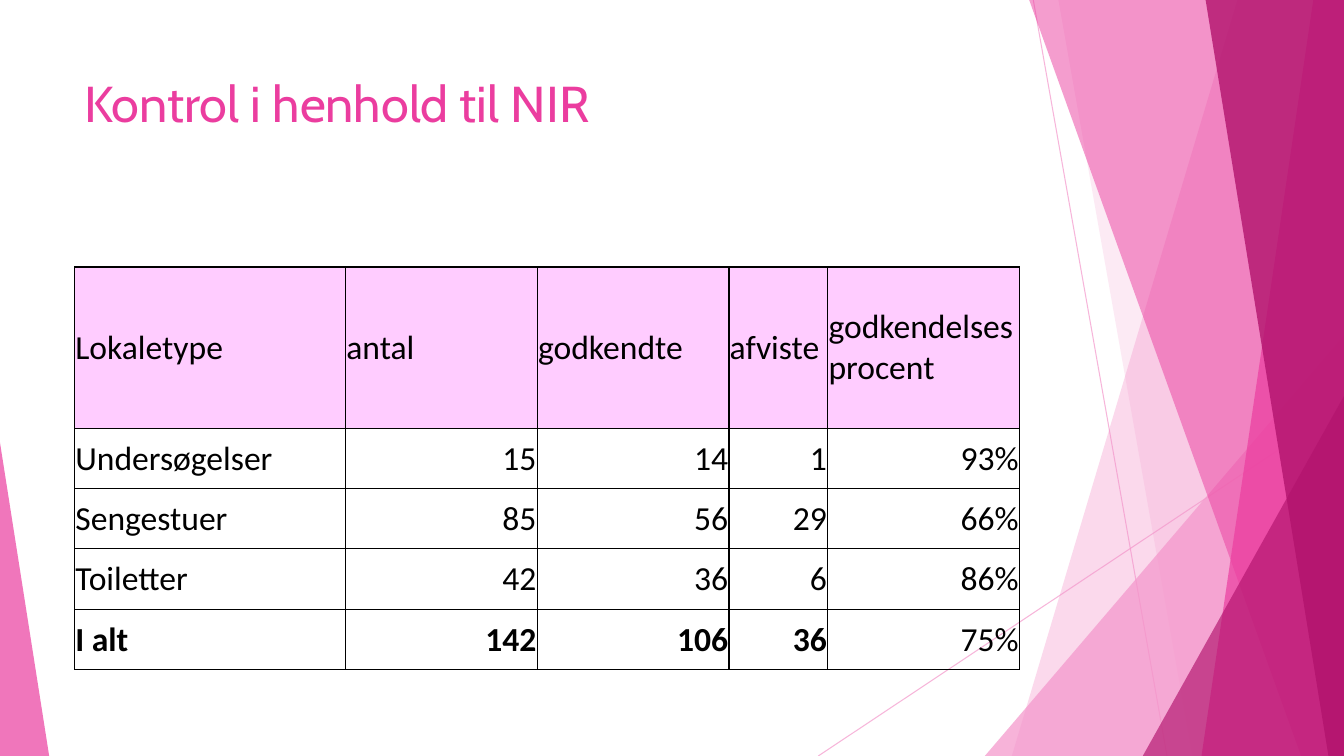
from lxml import etree
from pptx import Presentation
from pptx import util as u
from pptx.dml.color import RGBColor
from pptx.enum import shapes, text
from pptx.oxml import ns

PINK = RGBColor(0xEB, 0x3D, 0x9F)
LIGHT_PINK = RGBColor(0xF4, 0x96, 0xCB)
DARK_PINK = RGBColor(0xB2, 0x13, 0x6D)
HEADER_PINK = RGBColor(0xFF, 0xCC, 0xFF)
BLACK = RGBColor(0, 0, 0)

# Content
TITLE = "Kontrol i henhold til NIR"
ROWS = [
    ("Lokaletype", "antal", "godkendte", "afviste", "godkendelses procent"),
    ("Undersøgelser", "15", "14", "1", "93%"),
    ("Sengestuer", "85", "56", "29", "66%"),
    ("Toiletter", "42", "36", "6", "86%"),
    ("I alt", "142", "106", "36", "75%"),
]

# Geometry in centimetres
WIDTH, HEIGHT = 33.87, 19.05
TOP = -0.02
COLUMN_WIDTHS = [6.83, 4.83, 4.83, 2.49, 4.83]
ROW_HEIGHTS = [4.06] + [1.52] * 4
LINES = [(26.04, 0, 29.41, HEIGHT), (WIDTH, 10.24, 20.62, HEIGHT)]
# Bands reach the right edge: ("band", (top x, bottom x), colour, opacity %)
# Triangles: ("triangle", (left, top, apex position), colour, opacity %)
DECORATION = [
    ("band", (31.19, 25.5), LIGHT_PINK, 36),
    ("band", (26.67, 30.05), LIGHT_PINK, 20),
    ("triangle", (24.82, 8.46, 1), LIGHT_PINK, 72),
    ("band", (25.93, 32.79), PINK, 50),
    ("band", (33.1, 30.28), PINK, 70),
    ("band", (30.38, 33.48), DARK_PINK, 80),
    ("triangle", (28.8, 9.98, 1), DARK_PINK, 66),
    ("triangle", (0, 11.15, 0), PINK, 70),
]
LEFT_TRIANGLE_WIDTH = 1.24


def set_opacity(element, percent):
    for colour in element.iter(ns.qn("a:srgbClr")):
        etree.SubElement(colour, ns.qn("a:alpha"), val=str(percent * 1000))


def add_text(paragraph, words, font_name, size, colour, bold=False):
    run = paragraph.add_run()
    run.text = words
    run.font.name, run.font.size, run.font.bold = font_name, u.Pt(size), bold
    run.font.color.rgb = colour


def add_line(slide, ends):
    line = slide.shapes.add_connector(
        shapes.MSO_CONNECTOR.STRAIGHT, *[u.Cm(value) for value in ends])
    line.line.color.rgb = LIGHT_PINK
    line.line.width = u.Pt(0.75)
    properties = line._element.spPr
    set_opacity(properties, 70)
    etree.SubElement(properties, ns.qn("a:effectLst"))


def add_band(slide, top_x, bottom_x):
    corners = [(top_x, TOP), (WIDTH, TOP), (WIDTH, HEIGHT), (bottom_x, HEIGHT)]
    points = [(u.Cm(x), u.Cm(y)) for x, y in corners]
    builder = slide.shapes.build_freeform(*points[0])
    builder.add_line_segments(points[1:], close=True)
    return builder.convert_to_shape()


def add_triangle(slide, left, top, apex):
    width = WIDTH - left if apex else LEFT_TRIANGLE_WIDTH
    triangle = slide.shapes.add_shape(
        shapes.MSO_SHAPE.ISOSCELES_TRIANGLE,
        u.Cm(left), u.Cm(top), u.Cm(width), u.Cm(HEIGHT - top))
    triangle.adjustments[0] = apex
    return triangle


def add_borders(cell):
    properties = cell._tc.get_or_add_tcPr()
    for index, side in enumerate(("a:lnL", "a:lnR", "a:lnT", "a:lnB")):
        border = etree.Element(ns.qn(side), w=str(u.Pt(1)))
        fill = etree.SubElement(border, ns.qn("a:solidFill"))
        etree.SubElement(fill, ns.qn("a:srgbClr"), val=str(BLACK))
        properties.insert(index, border)


def add_table(slide):
    table = slide.shapes.add_table(
        len(ROWS), len(COLUMN_WIDTHS), u.Cm(1.88), u.Cm(6.73),
        u.Cm(sum(COLUMN_WIDTHS)), u.Cm(sum(ROW_HEIGHTS))).table
    table.first_row = table.horz_banding = False
    for column, width in zip(table.columns, COLUMN_WIDTHS):
        column.width = u.Cm(width)
    for row, height in zip(table.rows, ROW_HEIGHTS):
        row.height = u.Cm(height)

    last_row, last_column = len(ROWS) - 1, len(COLUMN_WIDTHS) - 1
    for i, values in enumerate(ROWS):
        for j, value in enumerate(values):
            cell = table.cell(i, j)
            cell.margin_left = cell.margin_right = cell.margin_top = u.Cm(0.02)
            cell.margin_bottom = 0
            cell.vertical_anchor = text.MSO_ANCHOR.MIDDLE
            if i == 0:
                cell.fill.solid()
                cell.fill.fore_color.rgb = HEADER_PINK
            else:
                cell.fill.background()
            add_borders(cell)
            paragraph = cell.text_frame.paragraphs[0]
            if i > 0 and j > 0:
                paragraph.alignment = text.PP_ALIGN.RIGHT
            bold = i == last_row and j < last_column
            add_text(paragraph, value, "Calibri", 24, BLACK, bold)


def main():
    presentation = Presentation()
    presentation.slide_width, presentation.slide_height = u.Cm(WIDTH), u.Cm(HEIGHT)
    slide = presentation.slides.add_slide(presentation.slide_layouts[6])

    # Background decoration
    for ends in LINES:
        add_line(slide, ends)
    for kind, geometry, colour, opacity in DECORATION:
        add_part = add_band if kind == "band" else add_triangle
        shape = add_part(slide, *geometry)
        shape.shadow.inherit = False
        shape.fill.solid()
        shape.fill.fore_color.rgb = colour
        set_opacity(shape._element.spPr, opacity)
        shape.line.fill.background()

    # Title
    title = slide.shapes.add_textbox(u.Cm(1.88), u.Cm(1.7), u.Cm(23.88), u.Cm(3.66))
    title.text_frame.word_wrap = True
    add_text(title.text_frame.paragraphs[0], TITLE, "Cabin", 36, PINK)

    add_table(slide)
    presentation.save("out.pptx")


if __name__ == "__main__":
    main()
